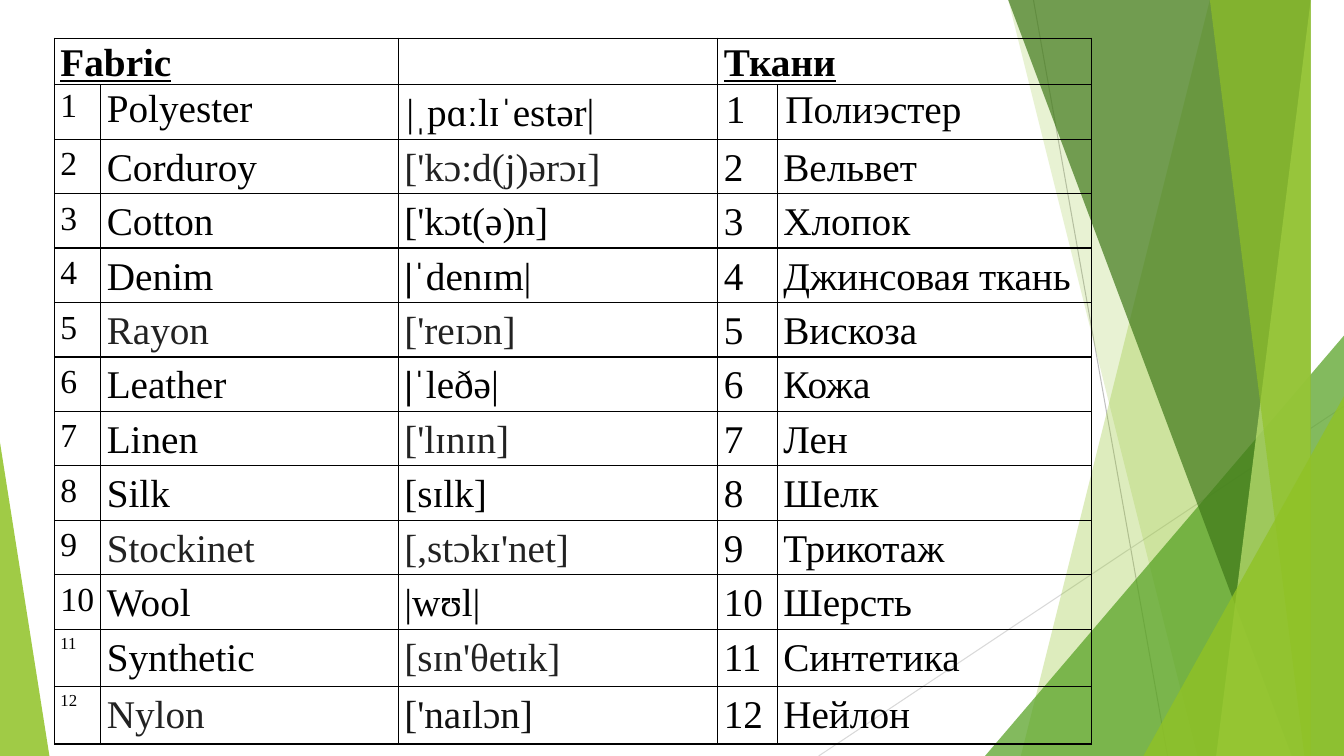
import lxml.etree
import pptx
import pptx.dml.color
import pptx.enum.shapes
import pptx.enum.text
import pptx.oxml.ns
import pptx.util
from pptx.util import Inches

qn = pptx.oxml.ns.qn
SubElement = lxml.etree.SubElement
BLACK = "000000"
GREY = "222222"


def paint(fill, colour, opacity=100):
    """Fill a shape, line or font with a hex colour; opacity is in percent."""
    fill.solid()
    fill.fore_color.rgb = pptx.dml.color.RGBColor.from_string(colour)
    if opacity < 100:
        colour_element = fill._xPr.find(qn("a:solidFill"))[0]
        SubElement(colour_element, qn("a:alpha"), val=str(opacity * 1000))


def write_text(cell, text, size=28, colour=BLACK, heading=False, bold_start=0, spaced=True):
    """Write one paragraph; bold_start is the number of leading bold characters."""
    paragraph = cell.text_frame.paragraphs[0]
    if spaced:
        paragraph.alignment = pptx.enum.text.PP_ALIGN.JUSTIFY
        paragraph.line_spacing = 1.07
        paragraph.space_after = pptx.util.Pt(8)
    for part, bold in ((text[:bold_start], True), (text[bold_start:], heading)):
        if part:
            run = paragraph.add_run()
            run.text = part
            run.font.name = "Times New Roman"
            run.font.size = pptx.util.Pt(size)
            run.font.bold = bold
            run.font.underline = heading
            paint(run.font.fill, colour)


presentation = pptx.Presentation()
presentation.slide_width = Inches(13.33)
presentation.slide_height = Inches(7.5)
slide = presentation.slides.add_slide(presentation.slide_layouts[6])

# Background lines and translucent green facets
for start_x, start_y, end_x, end_y, colour in (
    (10.25, 0, 11.58, 7.5, "BFBFBF"),
    (13.33, 4.03, 8.12, 7.5, "D9D9D9"),
):
    connector = slide.shapes.add_connector(
        pptx.enum.shapes.MSO_CONNECTOR.STRAIGHT,
        Inches(start_x), Inches(start_y), Inches(end_x), Inches(end_y),
    )
    connector.line.width = pptx.util.Pt(0.75)
    paint(connector.line.fill, colour)
    SubElement(connector._element.spPr, qn("a:effectLst"))

# Bands reach the right edge: (top x, bottom x); triangles: (left, top, width, height, apex)
facets = (
    ((12.28, 10.04), "90C226", 30),
    ((10.5, 11.83), "90C226", 20),
    ((9.77, 3.33, 3.56, 4.17, 1), "54A021", 72),
    ((10.21, 12.91), "3F7819", 70),
    ((13.03, 11.92), "C0E474", 70),
    ((11.96, 13.18), "90C226", 65),
    ((11.34, 3.93, 1.99, 3.57, 1), "90C226", 80),
    ((0, 4.39, 0.49, 3.11, 0), "90C226", 85),
)
for geometry, colour, opacity in facets:
    if len(geometry) == 2:
        top_x, bottom_x = geometry
        builder = slide.shapes.build_freeform(top_x, 0, scale=Inches(1))
        builder.add_line_segments([(13.33, 0), (13.33, 7.5), (bottom_x, 7.5)], close=True)
        facet = builder.convert_to_shape()
    else:
        *box, apex = geometry
        facet = slide.shapes.add_shape(
            pptx.enum.shapes.MSO_SHAPE.ISOSCELES_TRIANGLE, *map(Inches, box)
        )
        facet.adjustments[0] = apex
    facet.shadow.inherit = False
    facet.line.fill.background()
    paint(facet.fill, colour, opacity)

# Vocabulary: fabric, its colour, transcription, its colour, translation
fabrics = (
    ("Polyester", BLACK, "|ˌpɑːlɪˈestər|", BLACK, "Полиэстер"),
    ("Corduroy", BLACK, "['kɔ:d(j)ərɔɪ]", GREY, "Вельвет"),
    ("Cotton", BLACK, "['kɔt(ə)n]", BLACK, "Хлопок"),
    ("Denim", BLACK, "|ˈdenɪm|", BLACK, "Джинсовая ткань"),
    ("Rayon", GREY, "['reɪɔn]", GREY, "Вискоза"),
    ("Leather", BLACK, "|ˈleðə|", BLACK, "Кожа"),
    ("Linen", BLACK, "['lɪnɪn]", GREY, "Лен"),
    ("Silk", BLACK, "[sɪlk]", BLACK, "Шелк"),
    ("Stockinet", GREY, "[,stɔkɪ'net]", GREY, "Трикотаж"),
    ("Wool", BLACK, "|wʊl|", BLACK, "Шерсть"),
    ("Synthetic", BLACK, "[sɪn'θetɪk]", GREY, "Синтетика"),
    ("Nylon", GREY, "['naɪlɔn]", "111111", "Нейлон"),
)
column_widths = (0.46, 2.95, 3.17, 0.59, 3.12)
row_heights = [0.46] + [0.54] * 10 + [0.57] * 2

table = slide.shapes.add_table(
    len(row_heights), len(column_widths),
    Inches(0.54), Inches(0.38), Inches(sum(column_widths)), Inches(sum(row_heights)),
).table
table.first_row = False
table.horz_banding = False
for column, width in zip(table.columns, column_widths):
    column.width = Inches(width)
for row, height in zip(table.rows, row_heights):
    row.height = Inches(height)

for row_index, row in enumerate(table.rows):
    for column_index, cell in enumerate(row.cells):
        wide_inset = row_index == 1 and column_index >= 2
        flush = row_index == 0 or (row_index == 1 and column_index < 2)
        cell.margin_left = cell.margin_right = Inches(0.08 if wide_inset else 0.06)
        cell.margin_top = cell.margin_bottom = Inches(0 if flush else 0.04)
        properties = cell._tc.get_or_add_tcPr()
        for side in ("a:lnL", "a:lnR", "a:lnT", "a:lnB"):
            border = SubElement(properties, qn(side), w=str(pptx.util.Pt(1)))
            SubElement(SubElement(border, qn("a:solidFill")), qn("a:srgbClr"), val=BLACK)
        cell.fill.background()

for column_index, heading in ((0, "Fabric"), (3, "Ткани")):
    table.cell(0, column_index).merge(table.cell(0, column_index + 1))
    write_text(table.cell(0, column_index), heading, heading=True)

for number, (fabric, fabric_colour, sound, sound_colour, translation) in enumerate(fabrics, 1):
    cells = table.rows[number].cells
    spaced = number > 1
    write_text(cells[0], str(number), size=24 if number <= 10 else 12)
    write_text(cells[1], fabric, colour=fabric_colour)
    write_text(cells[2], sound, colour=sound_colour, bold_start=int(fabric in ("Denim", "Leather")))
    write_text(cells[3], str(number), spaced=spaced)
    write_text(cells[4], translation, spaced=spaced)

presentation.save("out.pptx")
